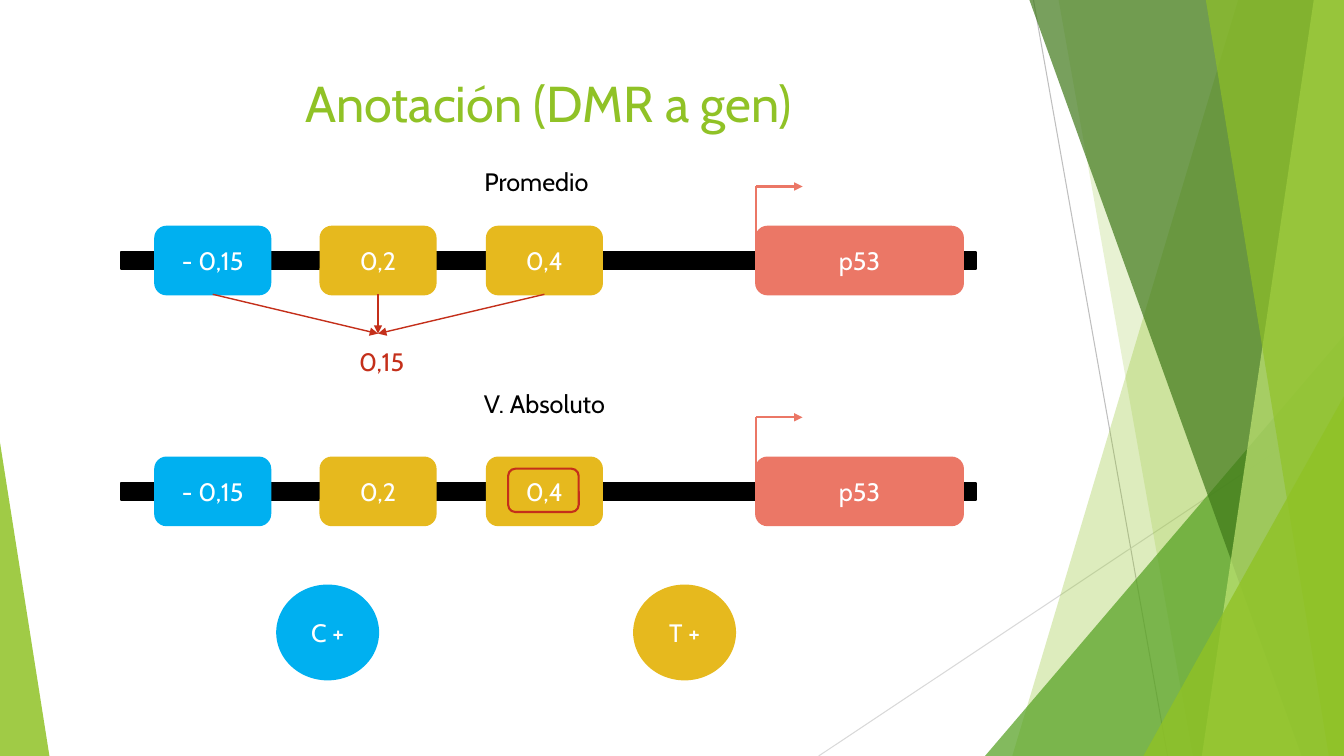
from pptx import Presentation
from pptx import util as u
from pptx.dml.color import RGBColor
from pptx.enum import shapes, text
from pptx.oxml import parse_xml
from pptx.oxml.ns import nsdecls, qn
from lxml import etree

COLORS = {
    "lime": "90C226", "leaf": "54A021", "forest": "3F7819", "pale": "C0E474",
    "blue": "00B0F0", "gold": "E6B91E", "coral": "EB7766", "red": "C42F1A",
    "black": "000000", "white": "FFFFFF", "grey": "BFBFBF", "silver": "D9D9D9",
}
FONT = "Cabin"
SHAPE = shapes.MSO_SHAPE
SITE_W, SITE_H = 1.14, 0.67
SITES = [(0.34, "- 0,15", "blue"), (1.98, "0,2", "gold"), (3.63, "0,4", "gold")]


def rgb(color):
    return RGBColor.from_string(COLORS[color])


def write(frame, words, color, size=18):
    frame.text = words
    frame.word_wrap = True
    paragraph = frame.paragraphs[0]
    paragraph.alignment = text.PP_ALIGN.CENTER
    font = paragraph.runs[0].font
    for name, value in {"name": FONT, "size": u.Pt(size), "bold": False}.items():
        setattr(font, name, value)
    font.color.rgb = rgb(color)


def paint(shape, fill=None, line=None, alpha=100):
    shape.shadow.inherit = False
    if fill:
        shape.fill.solid()
        shape.fill.fore_color.rgb = rgb(fill)
        if alpha < 100:
            color = shape.fill._xPr.find(qn("a:solidFill"))[0]
            etree.SubElement(color, qn("a:alpha"), val=str(alpha * 1000))
    else:
        shape.fill.background()
    if line:
        shape.line.color.rgb = rgb(line)
        shape.line.width = u.Pt(1.5)
    else:
        shape.line.fill.background()


def add_block(slide, kind, box, fill=None, line=None, words=None, alpha=100):
    block = slide.shapes.add_shape(kind, *map(u.Inches, box))
    paint(block, fill, line, alpha)
    if words:
        write(block.text_frame, words, "white")
        block.text_frame.vertical_anchor = text.MSO_ANCHOR.MIDDLE
    return block


def add_line(slide, start, end, color, width, arrow=False):
    line = slide.shapes.add_connector(
        shapes.MSO_CONNECTOR.STRAIGHT, *map(u.Inches, (*start, *end)))
    line.line.color.rgb = rgb(color)
    line.line.width = u.Pt(width)
    if arrow:
        etree.SubElement(line.line._get_or_add_ln(), qn("a:tailEnd"), type="triangle")
    line._element.spPr.append(parse_xml(f"<a:effectLst {nsdecls('a')}/>"))
    return line


def add_label(slide, box, words, color):
    label = slide.shapes.add_textbox(*map(u.Inches, box))
    write(label.text_frame, words, color)


def add_title(slide, box, words):
    title = slide.shapes.title
    for name, value in zip(("left", "top", "width", "height"), box):
        setattr(title, name, u.Inches(value))
    write(title.text_frame, words, "lime", 36)
    title.text_frame.vertical_anchor = text.MSO_ANCHOR.TOP


def add_facets(slide, box):
    """Green facets along the right edge and a wedge at the lower left."""
    left, top, width, height = box
    right, bottom = left + width, top + height

    def band(top_x, bottom_x, fill, alpha):
        corners = [(top_x, top), (right, top), (right, bottom), (bottom_x, bottom)]
        points = [(u.Inches(x), u.Inches(y)) for x, y in corners]
        builder = slide.shapes.build_freeform(*points[0], scale=1.0)
        builder.add_line_segments(points[1:], close=True)
        paint(builder.convert_to_shape(), fill, alpha=alpha)

    def wedge(x, w, h, apex, fill, alpha):
        triangle = add_block(slide, SHAPE.ISOSCELES_TRIANGLE,
                             (x, bottom - h, w, h), fill, alpha=alpha)
        triangle.adjustments[0] = apex

    add_line(slide, (10.25, top), (11.58, bottom), "grey", 0.75)
    add_line(slide, (right, 4.03), (8.12, bottom), "silver", 0.75)
    band(12.28, 10.04, "lime", 30)
    band(10.5, 11.83, "lime", 20)
    wedge(right - 3.56, 3.56, 4.17, 1, "leaf", 72)
    band(10.21, 12.91, "forest", 70)
    band(13.03, 11.92, "pale", 70)
    band(11.96, 13.18, "lime", 65)
    wedge(right - 1.99, 1.99, 3.57, 1, "lime", 80)
    wedge(left, 0.49, 3.11, 0, "lime", 85)


def add_strand(slide, box):
    """DNA strand with its gene, promoter arrow and methylation sites."""
    left, top, width, height = box
    add_block(slide, SHAPE.RECTANGLE, (left, top + 0.25, width, 0.17), "black", "black")
    gene_x = left + 6.3
    gene = add_block(slide, SHAPE.ROUNDED_RECTANGLE, (gene_x, top, 2.05, height),
                     "coral", "coral", "p53")
    bend = (gene_x, top - 0.4)
    promoter = add_line(slide, (gene_x, top + height / 2), bend, "coral", 1.5)
    promoter.begin_connect(gene, 1)
    add_line(slide, bend, (gene_x + 0.46, top - 0.4), "coral", 1.5, arrow=True)
    return [add_block(slide, SHAPE.ROUNDED_RECTANGLE,
                      (left + offset, top, SITE_W, height), color, color, value)
            for offset, value, color in SITES]


def add_average(slide, box):
    left, top, width, height = box
    sites = add_strand(slide, box)
    target = (left + SITES[1][0] + SITE_W / 2, top + 1.06)
    for site, (offset, _, _) in zip(sites, SITES):
        start = (left + offset + SITE_W / 2, top + height)
        arrow = add_line(slide, start, target, "red", 1, arrow=True)
        arrow.begin_connect(site, 2)
    add_label(slide, (left + 2.24, top + 1.14, 0.69, 0.4), "0,15", "red")
    add_label(slide, (left + 3.48, top - 0.65, 1.28, 0.4), "Promedio", "black")


def add_absolute(slide, box):
    left, top, _, _ = box
    add_strand(slide, box)
    # Outline around the largest absolute value
    add_block(slide, SHAPE.ROUNDED_RECTANGLE,
              (left + 3.84, top + 0.11, 0.7, 0.43), line="red")
    add_label(slide, (left + 3.48, top - 0.74, 1.44, 0.4), "V. Absoluto", "black")


def add_legend(slide, box):
    left, top, width, height = box
    for x, words, color in ((left, "C +", "blue"), (left + width - 1, "T +", "gold")):
        add_block(slide, SHAPE.OVAL, (x, top, 1, height), color, color, words)


def main():
    deck = Presentation()
    deck.slide_width, deck.slide_height = u.Inches(13.33), u.Inches(7.5)
    slide = deck.slides.add_slide(deck.slide_layouts[5])
    add_facets(slide, (0, 0, 13.33, 7.5))
    add_title(slide, (0.74, 0.67, 9.4, 0.88), "Anotación (DMR a gen)")
    add_average(slide, (1.2, 2.25, 8.48, SITE_H))
    add_absolute(slide, (1.2, 4.54, 8.48, SITE_H))
    add_legend(slide, (2.75, 5.81, 4.54, 0.93))
    deck.save("out.pptx")


if __name__ == "__main__":
    main()
